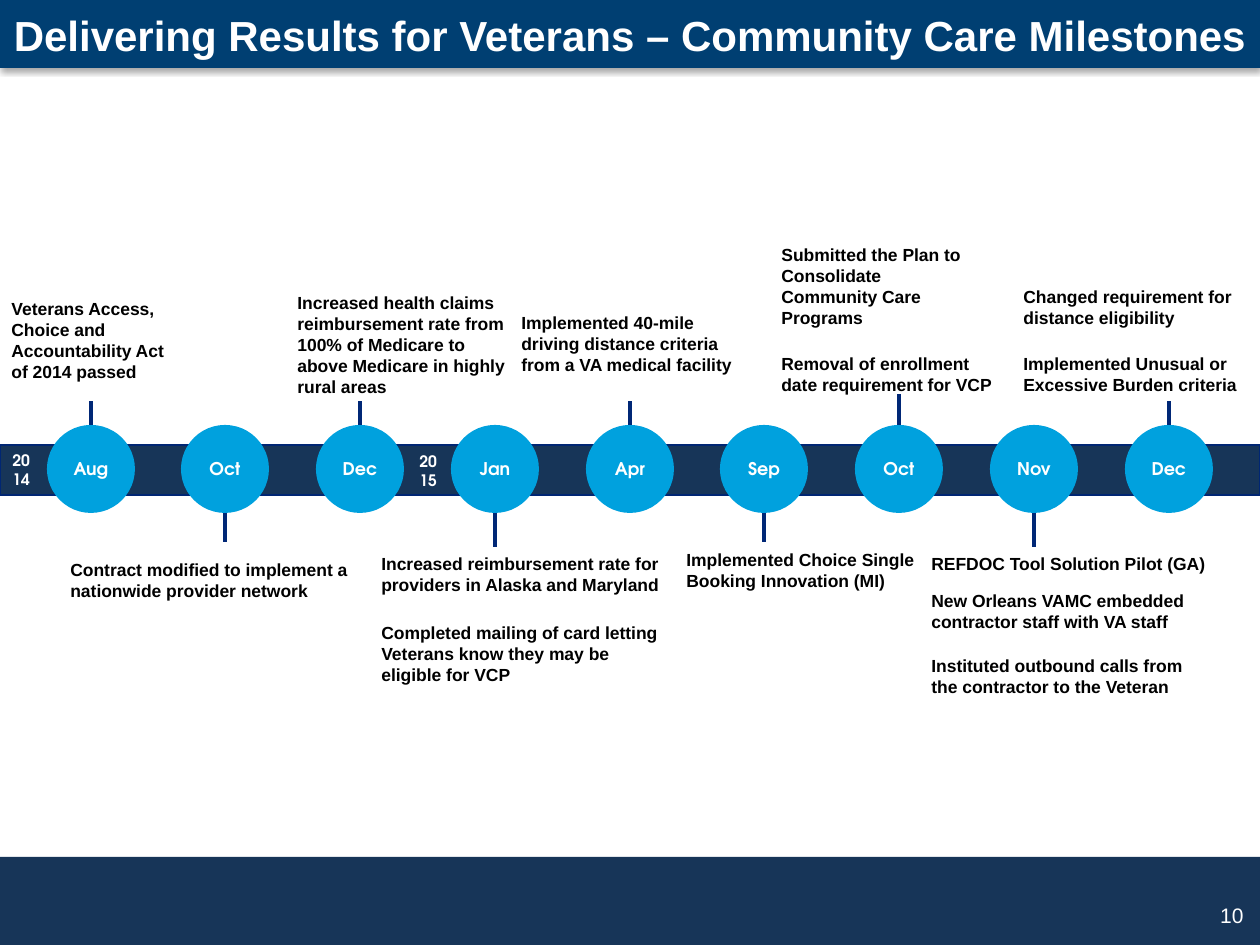
from pptx import Presentation
from pptx.dml.color import RGBColor
from pptx.enum.shapes import MSO_CONNECTOR as CONN, MSO_SHAPE as SHAPE
from pptx.enum.text import MSO_ANCHOR as ANCHOR, MSO_AUTO_SIZE as FIT, PP_ALIGN as ALIGN
from pptx.oxml import parse_xml
from pptx.oxml.ns import nsdecls
from pptx.util import Emu, Pt

PX = 914400 // 126
WIDTH, HEIGHT = 1260, 945
CIRCLE_TOP, CIRCLE = 425, 88
FIRST, LAST = 91, 1169
MONTHS = ["Aug", "Oct", "Dec", "Jan", "Apr", "Sep", "Oct", "Nov", "Dec"]
STEM_ENDS = [401, 542, 401, 547, 401, 542, 394, 547, 401]
YEARS = [(0, 445, "2014"), (407, 446, "2015")]
MILESTONES = [
    (-1, 292, 183, 108, "Veterans Access, Choice and Accountability Act of 2014 passed"),
    (58, 553, 330, 87, "Contract modified to implement a nationwide provider network"),
    (285, 286, 234, 47, "Increased health claims reimbursement rate from 100% of Medicare "
                        "to above Medicare in highly rural areas"),
    (369, 547, 354, 45, "Increased reimbursement rate for providers in Alaska and Maryland"),
    (369, 616, 301, 57, "Completed mailing of card letting Veterans know they may be eligible for VCP"),
    (509, 306, 242, 88, "Implemented 40-mile driving distance criteria from a VA medical facility"),
    (674, 543, 256, 43, "Implemented Choice Single Booking Innovation (MI)"),
    (769, 347, 242, 48, "Removal of enrollment date requirement for VCP"),
    (769, 238, 221, 24, "Submitted the Plan to Consolidate Community Care Programs"),
    (919, 547, 326, 53, "REFDOC Tool Solution Pilot (GA)"),
    (919, 584, 289, 63, "New Orleans VAMC embedded\ncontractor staff with VA staff"),
    (919, 649, 289, 28, "Instituted outbound calls from the contractor to the Veteran"),
    (1011, 280, 248, 48, "Changed requirement for distance eligibility"),
    (1011, 347, 248, 44, "Implemented Unusual or Excessive Burden criteria"),
]


def rgb(color):
    return RGBColor.from_string(color)


def px(*lengths):
    return [Emu(n * PX) for n in lengths]


class Deck:
    sans, display = "Arial", "TeX Gyre Adventor"
    navy, header, sky = "173558", "003F72", "00A1DE"
    edge, stem_color = "002673", "002776"
    white, black = "FFFFFF", "000000"

    def __init__(self):
        self.prs = Presentation()
        self.prs.slide_width, self.prs.slide_height = px(WIDTH, HEIGHT)
        self.s = self.prs.slides.add_slide(self.prs.slide_layouts[5])

    def fill_text(self, tf, text, size, color, font=None, bold=True,
                  align=ALIGN.LEFT, anchor=ANCHOR.TOP):
        tf.auto_size = FIT.NONE
        tf.word_wrap = True
        tf.vertical_anchor = anchor
        tf.text = text
        for p in tf.paragraphs:
            p.alignment = align
            p.font.name = font or self.sans
            p.font.size = Pt(size)
            p.font.bold = bold
            p.font.color.rgb = rgb(color)

    def shape(self, kind, x, y, w, h, fill, line=None):
        sp = self.s.shapes.add_shape(kind, *px(x, y, w, h))
        sp.shadow.inherit = False
        sp.fill.solid()
        sp.fill.fore_color.rgb = rgb(fill)
        if line:
            sp.line.color.rgb = rgb(line)
            sp.line.width = Pt(0.75)
        else:
            sp.line.fill.background()
        return sp

    def header_bar(self, h):
        sp = self.shape(SHAPE.RECTANGLE, 0, 0, WIDTH, h, self.header)
        sp.element.spPr.remove(sp.element.spPr[-1])
        sp.element.spPr.append(parse_xml(
            f'<a:effectLst {nsdecls("a")}><a:outerShdw blurRad="{Pt(3.1)}" dist="{Pt(1.8)}" '
            'dir="5400000" rotWithShape="0"><a:srgbClr val="000000"><a:alpha val="35000"/>'
            '</a:srgbClr></a:outerShdw></a:effectLst>'))

    def title(self, text, h):
        sp = self.s.shapes.title
        sp.left, sp.top, sp.width, sp.height = px(0, 0, WIDTH, h)
        tf = sp.text_frame
        tf.margin_left = tf.margin_right = 0
        self.fill_text(tf, text, 24, self.white, align=ALIGN.CENTER, anchor=ANCHOR.MIDDLE)
        sp.element.getparent().append(sp.element)

    def text(self, x, y, w, h, text, size, color, **style):
        sp = self.s.shapes.add_textbox(*px(x, y, w, h))
        self.fill_text(sp.text_frame, text, size, color, **style)

    def month(self, center, label):
        sp = self.shape(SHAPE.OVAL, center - CIRCLE // 2, CIRCLE_TOP, CIRCLE, CIRCLE, self.sky)
        tf = sp.text_frame
        tf.margin_left = tf.margin_right = 0
        self.fill_text(tf, label, 10, self.white, font=self.display,
                       align=ALIGN.CENTER, anchor=ANCHOR.MIDDLE)

    def stem(self, x, end):
        start = CIRCLE_TOP if end < CIRCLE_TOP else CIRCLE_TOP + CIRCLE
        line = self.s.shapes.add_connector(CONN.STRAIGHT, *px(x, start, x, end))
        line.line.color.rgb = rgb(self.stem_color)
        line.line.width = Pt(2)
        line.element.spPr.append(parse_xml(f'<a:effectLst {nsdecls("a")}/>'))


def main():
    d = Deck()
    d.shape(SHAPE.RECTANGLE, 0, 857, WIDTH, 88, d.navy)
    d.header_bar(68)
    d.text(1152, 888, 104, 54, "10", 12, d.white, bold=False,
           align=ALIGN.RIGHT, anchor=ANCHOR.MIDDLE)
    d.title("Delivering Results for Veterans – Community Care Milestones", 69)

    d.shape(SHAPE.RECTANGLE, 0, 445, WIDTH, 50, d.navy, d.edge)
    for i, (label, end) in enumerate(zip(MONTHS, STEM_ENDS)):
        center = FIRST + i * (LAST - FIRST) // (len(MONTHS) - 1)
        d.month(center, label)
        d.stem(center, end)
    for x, y, year in YEARS:
        d.text(x, y, 47, 50, year, 9, d.white, font=d.display)
    for x, y, w, h, milestone in MILESTONES:
        d.text(x, y, w, h, milestone, 10, d.black)

    d.prs.save("out.pptx")


if __name__ == "__main__":
    main()
